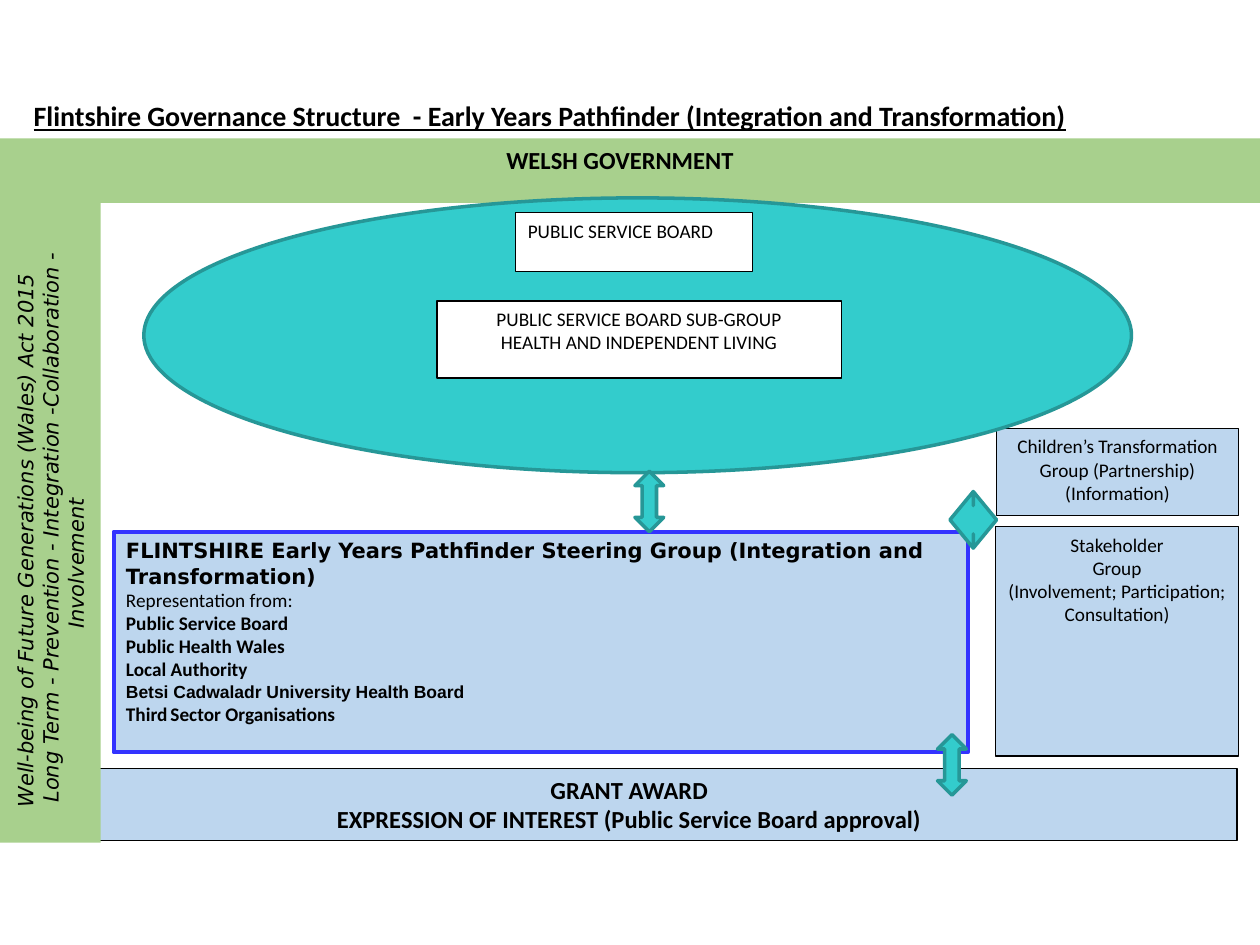
from pptx import Presentation
from pptx.dml.color import RGBColor
from pptx.enum.shapes import MSO_SHAPE
from pptx.enum.text import MSO_ANCHOR, PP_ALIGN
from pptx.util import Cm, Pt

RECT, OVAL, ARROW = MSO_SHAPE.RECTANGLE, MSO_SHAPE.OVAL, MSO_SHAPE.UP_DOWN_ARROW
TOP, MIDDLE = MSO_ANCHOR.TOP, MSO_ANCHOR.MIDDLE
LEFT, CENTER = PP_ALIGN.LEFT, PP_ALIGN.CENTER

THEME = {
    "black": RGBColor.from_string("000000"),
    "white": RGBColor.from_string("FFFFFF"),
    "blue": RGBColor.from_string("BDD6EE"),
    "frame": RGBColor.from_string("3333FF"),
    "green": RGBColor.from_string("A8D08D"),
    "teal": RGBColor.from_string("33CCCC"),
    "teal_edge": RGBColor.from_string("269797"),
    "title": {"name": "Calibri", "size": Pt(16), "bold": True, "underline": True},
    "heading": {"name": "Calibri", "size": Pt(14), "bold": True},
    "body": {"name": "Calibri", "size": Pt(11)},
    "member": {"name": "Calibri", "size": Pt(11), "bold": True},
    "gap": {"name": "Calibri", "size": Pt(7), "bold": True},
    "board": {"name": "Arial", "size": Pt(10), "bold": True},
    "group": {"name": "DejaVu Sans", "size": Pt(12), "bold": True},
    "law": {"name": "DejaVu Sans", "size": Pt(12), "italic": True},
}


def draw_shape(kind, place, fill, edge=None, width=0.75):
    shape = page.shapes.add_shape(kind, *map(Cm, place))
    shape.shadow.inherit = False
    shape.fill.solid()
    shape.fill.fore_color.rgb = THEME[fill]
    if edge:
        shape.line.color.rgb = THEME[edge]
        shape.line.width = Pt(width)
    else:
        shape.line.fill.background()
    return shape


def write_lines(box, lines, align=CENTER, anchor=TOP, wrap=True):
    frame = box.text_frame
    frame.word_wrap = wrap
    frame.vertical_anchor = anchor
    for index, spans in enumerate(lines):
        para = frame.add_paragraph() if index else frame.paragraphs[0]
        para.alignment = align
        for style, text in spans:
            span = para.add_run()
            span.text = text
            span.font.color.rgb = THEME["black"]
            for name, value in THEME[style].items():
                setattr(span.font, name, value)


deck = Presentation()
deck.slide_width, deck.slide_height = Cm(25.4), Cm(19.05)
page = deck.slides.add_slide(deck.slide_layouts[6])

children = draw_shape(RECT, (20.09, 8.64, 4.88, 1.75), "blue", "black")
write_lines(children, [
    [("body", "Children’s Transformation Group (Partnership)")],
    [("body", "(Information)")],
])

grant = draw_shape(RECT, (0.43, 15.49, 24.51, 1.45), "blue", "black")
write_lines(grant, [
    [("heading", "GRANT AWARD")],
    [("heading", "EXPRESSION OF INTEREST (Public Service Board approval)")],
])

steering = draw_shape(RECT, (2.29, 10.72, 17.22, 4.45), "blue", "frame", 2.25)
write_lines(steering, [
    [("group", "FLINTSHIRE Early Years Pathfinder Steering Group (Integration and Transformation)")],
    [("body", "Representation from:")],
    [("member", "Public Service Board")],
    [("member", "Public Health Wales")],
    [("member", "Local Authority")],
    [("board", "Betsi Cadwaladr University Health Board")],
    [("member", "Third"), ("gap", " "), ("member", "Sector Organisations")],
], LEFT)

government = draw_shape(RECT, (-0.81, 2.79, 26.62, 1.3), "green")
write_lines(government, [[("heading", "WELSH GOVERNMENT")]])

stakeholders = draw_shape(RECT, (20.07, 10.62, 4.9, 4.62), "blue", "black")
write_lines(stakeholders, [
    [("body", "Stakeholder")],
    [("body", "Group")],
    [("body", "(Involvement; Participation;")],
    [("body", "Consultation)")],
])

draw_shape(OVAL, (2.9, 3.99, 19.91, 5.54), "teal", "teal_edge", 2)

service_board = draw_shape(RECT, (10.39, 4.29, 4.78, 1.19), "white", "black")
write_lines(service_board, [[("body", "PUBLIC SERVICE BOARD")]], LEFT)

sub_group = draw_shape(RECT, (8.81, 6.07, 8.15, 1.55), "white", "black")
write_lines(sub_group, [
    [("body", "PUBLIC SERVICE BOARD SUB-GROUP")],
    [("body", "HEALTH AND INDEPENDENT LIVING")],
])

act = draw_shape(RECT, (0, 3.99, 2.03, 13), "green")
write_lines(act, [
    [("law", "Well-being of Future Generations (Wales) Act 2015")],
    [("law", "Long Term - Prevention - Integration -Collaboration -")],
    [("law", "Involvement")],
], LEFT, MIDDLE)
act.text_frame._txBody.bodyPr.set("vert", "vert270")
for para, indent in zip(act.text_frame.paragraphs, (0.46, 0.56, 4.06)):
    para._p.get_or_add_pPr().set("marL", str(Cm(indent)))

for place, turn in (
    ((12.8, 9.5, 0.58, 1.22), 0),
    ((18.9, 14.81, 0.58, 1.22), 0),
    ((19.05, 10.01, 1.14, 0.94), 90),
):
    arrow = draw_shape(ARROW, place, "teal", "teal_edge", 2)
    arrow.rotation = turn

title = page.shapes.add_textbox(*map(Cm, (0.43, 1.14, 21.44, 2.39)))
write_lines(title, [
    [("title", "Flintshire Governance Structure  - Early Years Pathfinder (Integration and Transformation)")],
], LEFT, MIDDLE, False)

deck.save("out.pptx")
